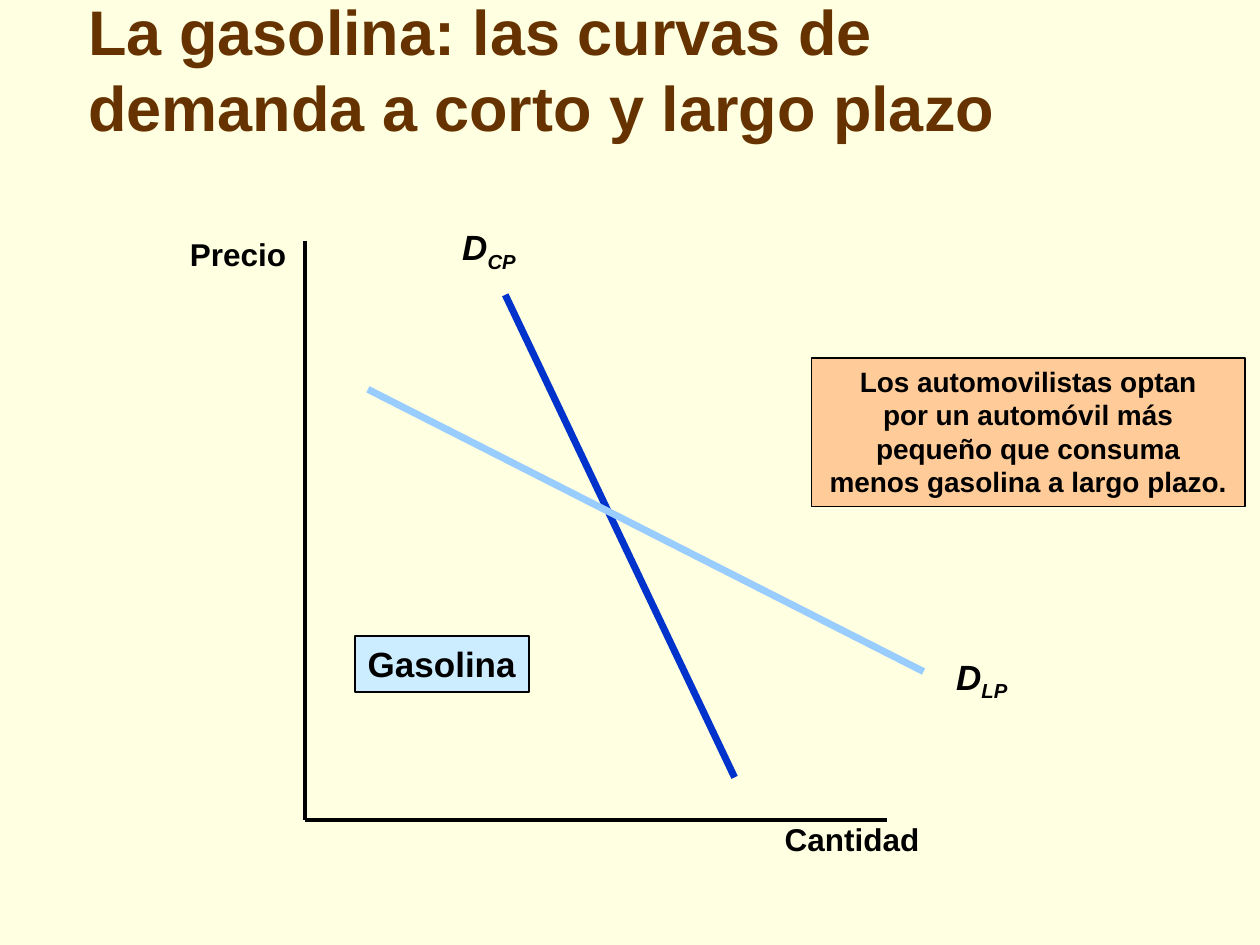
from dataclasses import dataclass
from typing import Optional

from lxml.etree import SubElement
from pptx import Presentation
from pptx.dml.color import RGBColor
from pptx.enum.shapes import MSO_CONNECTOR, MSO_SHAPE
from pptx.enum.text import MSO_ANCHOR, MSO_AUTO_SIZE, PP_ALIGN
from pptx.oxml.ns import qn
from pptx.util import Inches, Pt


@dataclass(frozen=True)
class Theme:
    font: str = "Arial"
    background: str = "FFFFE1"
    title: str = "663300"
    ink: str = "000000"
    short_run: str = "0033CC"
    long_run: str = "99CCFF"
    callout: str = "FFCC99"
    market: str = "CCECFF"
    title_size: int = 36
    curve_size: int = 20
    axis_size: int = 18
    callout_size: int = 16
    curve_width: int = 4
    axis_width: int = 2
    border_width: int = 1


@dataclass(frozen=True)
class Segment:
    start: tuple[float, float]
    end: tuple[float, float]
    color: str
    width: int


@dataclass(frozen=True)
class Label:
    area: tuple[float, float, float, float]
    lines: tuple[str, ...]
    size: int
    subscript: str = ""
    fill: Optional[str] = None
    align: PP_ALIGN = PP_ALIGN.LEFT


THEME = Theme()
ORIGIN = (2.42, 6.51)

SEGMENTS = (
    Segment((4.01, 2.34), (5.83, 6.17), THEME.short_run, THEME.curve_width),
    Segment((2.92, 3.09), (7.33, 5.33), THEME.long_run, THEME.curve_width),
    Segment((ORIGIN[0], 1.91), ORIGIN, THEME.ink, THEME.axis_width),
    Segment(ORIGIN, (7.04, ORIGIN[1]), THEME.ink, THEME.axis_width),
)

LABELS = (
    Label((3.57, 1.74, 0.65, 0.43), ("D",), THEME.curve_size, subscript="CP"),
    Label((7.49, 5.15, 0.63, 0.43), ("D",), THEME.curve_size, subscript="LP"),
    Label(
        (6.44, 2.84, 3.44, 1.18),
        (
            "Los automovilistas optan",
            "por un automóvil más",
            "pequeño que consuma",
            "menos gasolina a largo plazo.",
        ),
        THEME.callout_size,
        fill=THEME.callout,
        align=PP_ALIGN.CENTER,
    ),
    Label((2.82, 5.05, 1.38, 0.44), ("Gasolina",), THEME.curve_size, fill=THEME.market),
    Label((6.13, 6.46, 1.27, 0.4), ("Cantidad",), THEME.axis_size),
    Label((1.32, 1.82, 1.05, 0.4), ("Precio",), THEME.axis_size, align=PP_ALIGN.RIGHT),
)


def add_span(para, text: str, size: int, color: str, italic: bool = False):
    span = para.add_run()
    span.text = text
    span.font.name = THEME.font
    span.font.size = Pt(size)
    span.font.bold = True
    span.font.italic = italic
    span.font.color.rgb = RGBColor.from_string(color)
    return span


def add_title(page, text: str) -> None:
    title = page.shapes.title
    title.left, title.top = Inches(0.6), Inches(0.4)
    title.width, title.height = Inches(8.73), Inches(0.79)
    frame = title.text_frame
    frame.auto_size = MSO_AUTO_SIZE.NONE
    frame.vertical_anchor = MSO_ANCHOR.BOTTOM
    para = frame.paragraphs[0]
    para.alignment = PP_ALIGN.LEFT
    add_span(para, text, THEME.title_size, THEME.title)


def add_segment(page, segment: Segment) -> None:
    points = [Inches(value) for value in segment.start + segment.end]
    connector = page.shapes.add_connector(MSO_CONNECTOR.STRAIGHT, *points)
    connector.line.color.rgb = RGBColor.from_string(segment.color)
    connector.line.width = Pt(segment.width)
    SubElement(connector._element.spPr, qn("a:effectLst"))


def add_label(page, label: Label) -> None:
    """Add a plain text box, or a bordered rectangle when the label has a fill."""
    area = [Inches(value) for value in label.area]
    if label.fill:
        box = page.shapes.add_shape(MSO_SHAPE.RECTANGLE, *area)
        box.shadow.inherit = False
        box.fill.solid()
        box.fill.fore_color.rgb = RGBColor.from_string(label.fill)
        box.line.color.rgb = RGBColor.from_string(THEME.ink)
        box.line.width = Pt(THEME.border_width)
    else:
        box = page.shapes.add_textbox(*area)
    frame = box.text_frame
    frame.word_wrap = False
    frame.auto_size = MSO_AUTO_SIZE.SHAPE_TO_FIT_TEXT
    frame.vertical_anchor = MSO_ANCHOR.TOP
    for index, line in enumerate(label.lines):
        para = frame.add_paragraph() if index else frame.paragraphs[0]
        para.alignment = label.align
        add_span(para, line, label.size, THEME.ink, italic=bool(label.subscript))
    if label.subscript:
        span = add_span(para, label.subscript, label.size, THEME.ink, italic=True)
        span.font._element.set("baseline", "-25000")


def main() -> None:
    deck = Presentation()
    deck.slide_width, deck.slide_height = Inches(10), Inches(7.5)
    page = deck.slides.add_slide(deck.slide_layouts.get_by_name("Title Only"))
    page.background.fill.solid()
    page.background.fill.fore_color.rgb = RGBColor.from_string(THEME.background)
    add_title(page, "La gasolina: las curvas de demanda a corto y largo plazo")
    for segment in SEGMENTS:
        add_segment(page, segment)
    for label in LABELS:
        add_label(page, label)
    deck.save("out.pptx")


if __name__ == "__main__":
    main()
